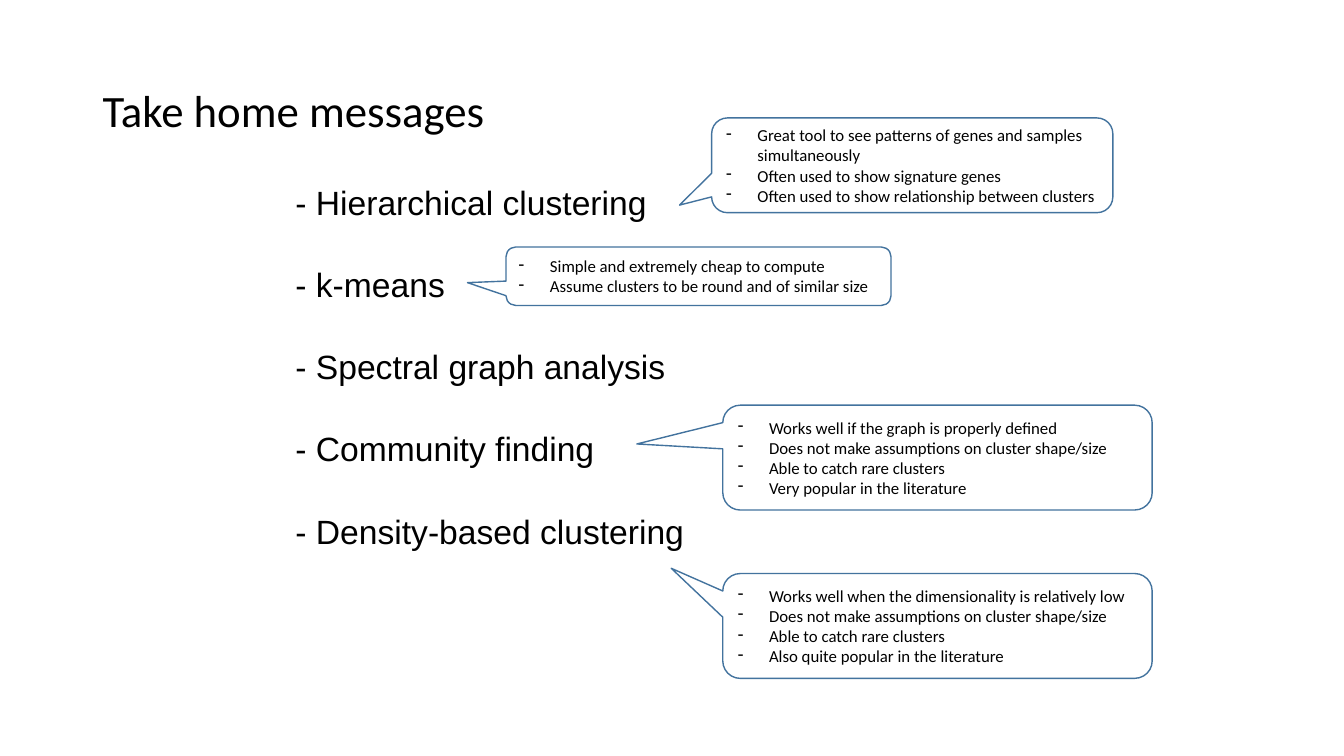
"""Build the "Take home messages" slide on clustering methods."""
from dataclasses import dataclass

from lxml import etree
from pptx import Presentation
from pptx.dml.color import RGBColor
from pptx.enum.shapes import MSO_SHAPE
from pptx.enum.text import MSO_ANCHOR, MSO_AUTO_SIZE, PP_ALIGN
from pptx.oxml.ns import qn
from pptx.util import Inches, Pt

CALLOUT = MSO_SHAPE.ROUNDED_RECTANGULAR_CALLOUT
TOP, MIDDLE = MSO_ANCHOR.TOP, MSO_ANCHOR.MIDDLE
NO_AUTO_SIZE = MSO_AUTO_SIZE.NONE
LEFT = PP_ALIGN.LEFT


@dataclass
class Theme:
    text: RGBColor = RGBColor(0x00, 0x00, 0x00)
    outline: RGBColor = RGBColor(0x43, 0x73, 0x9E)
    heading_font: str = "Calibri"
    list_font: str = "Arial"
    title_size: int = 32
    list_size: int = 24
    note_size: int = 12


theme = Theme()
deck = Presentation()
deck.slide_width, deck.slide_height = Inches(13.33), Inches(7.5)
page = deck.slides.add_slide(deck.slide_layouts[1])


def share(left, top, width, height):
    """Turn percentages of the slide's size into lengths."""
    across, down = deck.slide_width / 100, deck.slide_height / 100
    return int(left * across), int(top * down), int(width * across), int(height * down)


def write(box, lines, font, size, anchor, bullet=None, indent=0):
    """Fill a shape with one left-aligned paragraph per line."""
    frame = box.text_frame
    frame.text = "\n".join(lines)
    frame.vertical_anchor = anchor
    frame.auto_size = NO_AUTO_SIZE
    for para in frame.paragraphs:
        para.alignment = LEFT
        para.space_before = Pt(0)
        para.font.name, para.font.size = font, Pt(size)
        para.font.color.rgb = theme.text
        properties = para._p.get_or_add_pPr()
        properties.set("marL", str(indent))
        properties.set("indent", str(-indent))
        mark = etree.Element(qn("a:buChar" if bullet else "a:buNone"))
        if bullet:
            mark.set("char", bullet)
        properties.insert_element_before(mark, "a:tabLst", "a:defRPr", "a:extLst")
    return frame


title = page.shapes.title
title.left, title.top, title.width, title.height = share(6.88, 5.33, 86.25, 19.33)
heading = write(title, ["Take home messages"], theme.heading_font, theme.title_size, MIDDLE)
heading.paragraphs[0].line_spacing = 0.9

methods = [
    "- Hierarchical clustering",
    "- k-means",
    "- Spectral graph analysis",
    "- Community finding",
    "- Density-based clustering",
]
body = page.placeholders[1]
body.left, body.top, body.width, body.height = share(21.23, 23.33, 30.75, 60.53)
method_list = write(body, methods, theme.list_font, theme.list_size, TOP)
method_list.word_wrap = False
for para in method_list.paragraphs:
    para.space_after = Pt(30)

callouts = [
    ((52.95, 15.6, 29.85, 12.53), (-0.58, 0.42), [
        "Great tool to see patterns of genes and samples simultaneously",
        "Often used to show signature genes",
        "Often used to show relationship between clusters",
    ]),
    ((37.65, 32.67, 28.65, 7.73), (-0.6, 0.11), [
        "Simple and extremely cheap to compute",
        "Assume clusters to be round and of similar size",
    ]),
    ((53.78, 53.6, 31.95, 13.87), (-0.7, -0.13), [
        "Works well if the graph is properly defined",
        "Does not make assumptions on cluster shape/size",
        "Able to catch rare clusters",
        "Very popular in the literature",
    ]),
    ((53.78, 75.87, 31.95, 13.87), (-0.62, -0.55), [
        "Works well when the dimensionality is relatively low",
        "Does not make assumptions on cluster shape/size",
        "Able to catch rare clusters",
        "Also quite popular in the literature",
    ]),
]
for area, tip, notes in callouts:
    callout = page.shapes.add_shape(CALLOUT, *share(*area))
    callout.adjustments[0], callout.adjustments[1] = tip
    callout.shadow.inherit = False
    callout.fill.background()
    callout.line.color.rgb = theme.outline
    callout.line.width = Pt(1)
    write(callout, notes, theme.heading_font, theme.note_size, MIDDLE, "-", Inches(0.31))

deck.save("out.pptx")
